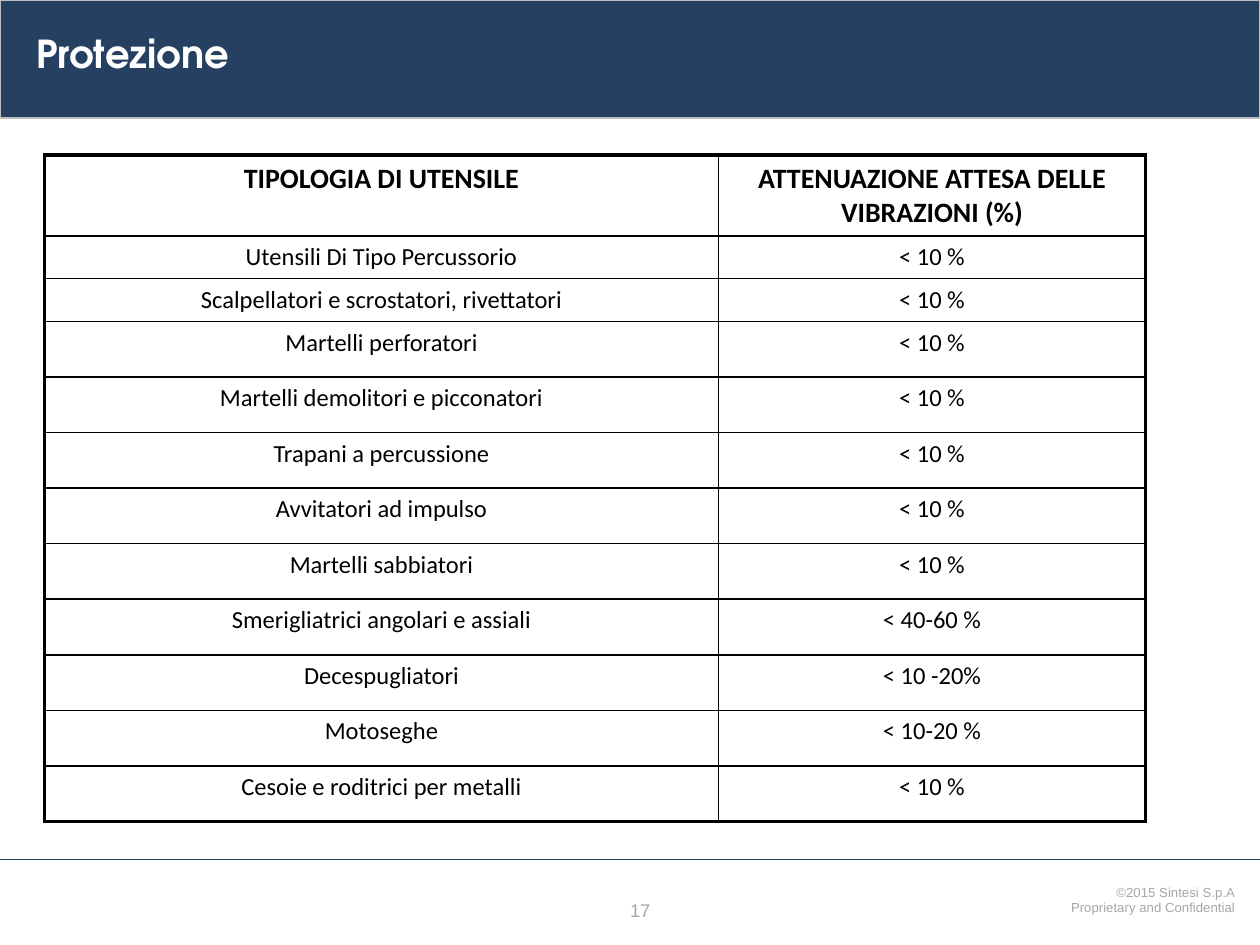
from lxml import etree
from pptx import Presentation
from pptx.dml.color import RGBColor
from pptx.enum import shapes, text
from pptx.oxml.ns import qn
from pptx.util import Pt

NAVY = RGBColor(0x25, 0x40, 0x61)
SILVER = RGBColor(0xBF, 0xBF, 0xBF)
GREY = RGBColor(0xA6, 0xA6, 0xA6)
WHITE = RGBColor(0xFF, 0xFF, 0xFF)
BLACK = RGBColor(0, 0, 0)

THIN, THICK = 1, 2.25
HEADINGS = ("TIPOLOGIA DI UTENSILE", "ATTENUAZIONE ATTESA DELLE VIBRAZIONI (%)")
TOOLS = [
    ("Utensili Di Tipo Percussorio", "< 10 %"),
    ("Scalpellatori e scrostatori, rivettatori", "< 10 %"),
    ("Martelli perforatori", "< 10 %"),
    ("Martelli demolitori e picconatori", "< 10 %"),
    ("Trapani a percussione", "< 10 %"),
    ("Avvitatori ad impulso", "< 10 %"),
    ("Martelli sabbiatori", "< 10 %"),
    ("Smerigliatrici angolari e assiali", "< 40-60 %"),
    ("Decespugliatori", "< 10 -20%"),
    ("Motoseghe", "< 10-20 %"),
    ("Cesoie e roditrici per metalli", "< 10 %"),
]
COLUMN_WIDTHS = (385.2, 244)
ROW_HEIGHTS = [46.3, 24.3, 24.5] + [31.75] * 9


def write(frame, lines, color, align, spacing=None, **font_format):
    """Fill a text frame with one paragraph per line, all in one format."""
    for index, line in enumerate(lines):
        paragraph = frame.paragraphs[0] if index == 0 else frame.add_paragraph()
        paragraph.alignment = align
        paragraph.line_spacing = spacing
        run = paragraph.add_run()
        run.text = line
        for attribute, value in font_format.items():
            setattr(run.font, attribute, value)
        run.font.color.rgb = color


def add_label(slide, box, lines, color, align, anchor=text.MSO_ANCHOR.TOP, **formats):
    frame = slide.shapes.add_textbox(*map(Pt, box)).text_frame
    frame.word_wrap = True
    frame.vertical_anchor = anchor
    write(frame, lines, color, align, **formats)


def add_band(slide):
    band = slide.shapes.add_shape(shapes.MSO_SHAPE.RECTANGLE, 0, 0, Pt(720), Pt(67.5))
    band.shadow.inherit = False
    band.fill.solid()
    band.fill.fore_color.rgb = NAVY
    band.line.color.rgb = SILVER
    band.line.width = Pt(0.75)


def add_footer_rule(slide):
    rule = slide.shapes.add_connector(
        shapes.MSO_CONNECTOR.STRAIGHT, 0, Pt(491), Pt(720), Pt(491))
    rule.line.color.rgb = NAVY
    rule.line.width = Pt(0.5)
    etree.SubElement(rule._element.spPr, qn("a:effectLst"))


def set_borders(cell, widths):
    """Draw black borders; widths maps lnL, lnR, lnT and lnB, in that order."""
    properties = cell._tc.get_or_add_tcPr()
    for position, (side, width) in enumerate(widths.items()):
        border = etree.Element(qn(f"a:{side}"), w=str(int(Pt(width))))
        fill = etree.SubElement(border, qn("a:solidFill"))
        etree.SubElement(fill, qn("a:srgbClr"), val=str(BLACK))
        properties.insert(position, border)


def add_attenuation_table(slide):
    rows = [HEADINGS] + TOOLS
    table = slide.shapes.add_table(
        len(rows), len(HEADINGS), Pt(25.4), Pt(88.6),
        Pt(sum(COLUMN_WIDTHS)), Pt(sum(ROW_HEIGHTS))).table
    table.horz_banding = False
    for column, width in zip(table.columns, COLUMN_WIDTHS):
        column.width = Pt(width)
    last_row, last_column = len(rows) - 1, len(HEADINGS) - 1
    for r, (row, height) in enumerate(zip(rows, ROW_HEIGHTS)):
        table.rows[r].height = Pt(height)
        for c, content in enumerate(row):
            cell = table.cell(r, c)
            cell.fill.background()
            outer = {"lnL": c == 0, "lnR": c == last_column,
                     "lnT": r == 0, "lnB": r == last_row}
            set_borders(cell, {side: THICK if edge else THIN
                               for side, edge in outer.items()})
            write(cell.text_frame, [content], BLACK, text.PP_ALIGN.CENTER,
                  name="Calibri", size=Pt(16 if r == 0 else 14), bold=r == 0)


def main():
    presentation = Presentation()
    presentation.slide_width, presentation.slide_height = Pt(720), Pt(540)
    slide = presentation.slides.add_slide(presentation.slide_layouts[6])

    right = text.PP_ALIGN.RIGHT
    add_label(slide, (341.3, 510.5, 37.4, 20.2), ["17"], GREY, right,
              name="Arial", size=Pt(10.5))
    add_label(slide, (521.3, 502.6, 191.5, 24.5),
              ["©2015 Sintesi S.p.A", "Proprietary and Confidential"], GREY, right,
              spacing=0.95, name="Arial", size=Pt(7.5))
    add_band(slide)
    add_footer_rule(slide)
    add_label(slide, (13.7, 0, 648, 61.2), ["Protezione"], WHITE, text.PP_ALIGN.LEFT,
              anchor=text.MSO_ANCHOR.MIDDLE,
              name="TeX Gyre Adventor", size=Pt(22), bold=True)
    add_attenuation_table(slide)
    presentation.save("out.pptx")


if __name__ == "__main__":
    main()
